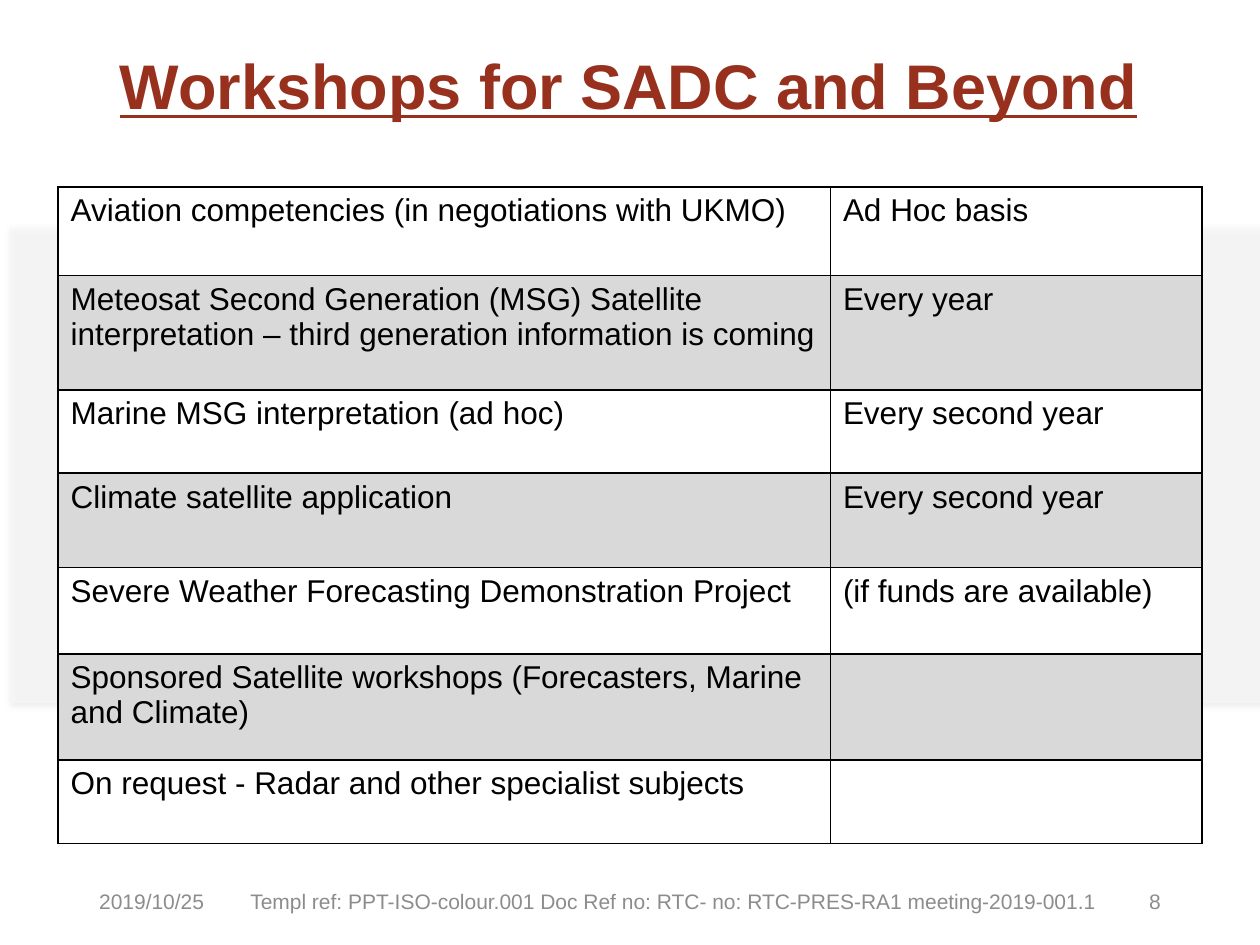
from lxml import etree
from pptx import Presentation
from pptx import util as u
from pptx.dml.color import RGBColor
from pptx.enum import shapes, text
from pptx.oxml import parse_xml
from pptx.oxml.ns import nsdecls, qn

WHITE = RGBColor(0xFF, 0xFF, 0xFF)
BLACK = RGBColor(0, 0, 0)
BAND = RGBColor(0xD9, 0xD9, 0xD9)
RUST = RGBColor(0x97, 0x30, 0x1D)
MUTED = RGBColor(0x8C, 0x8C, 0x8C)

TITLE_FORMAT = {"name": "Arial", "size": u.Pt(36), "bold": True, "underline": True}
CELL_FORMAT = {"name": "Arial", "size": u.Pt(18), "bold": False}
FOOTER_FORMAT = {"name": "Arial", "size": u.Pt(12)}

COLUMN_WIDTHS = (15.57, 7.49)
WORKSHOPS = (
    (1.78, "Aviation competencies (in negotiations with UKMO)", "Ad Hoc basis"),
    (2.31, "Meteosat Second Generation (MSG) Satellite interpretation – "
           "third generation information is coming", "Every year"),
    (1.68, "Marine MSG interpretation (ad hoc)", "Every second year"),
    (1.9, "Climate satellite application", "Every second year"),
    (1.74, "Severe Weather Forecasting Demonstration Project", "(if funds are available)"),
    (2.14, "Sponsored Satellite workshops (Forecasters, Marine and Climate)", ""),
    (1.68, "On request - Radar and other specialist subjects", ""),
)


def format_paragraph(paragraph, formats, color):
    """Apply font values and a colour to a paragraph."""
    for name, value in formats.items():
        setattr(paragraph.font, name, value)
    paragraph.font.color.rgb = color


def add_text(slide, box, words, formats, color, align, anchor):
    """Place one wrapped paragraph in a box and return the paragraph."""
    frame = slide.shapes.add_textbox(*map(u.Cm, box)).text_frame
    frame.word_wrap = True
    frame.vertical_anchor = anchor
    paragraph = frame.paragraphs[0]
    paragraph.text = words
    paragraph.alignment = align
    format_paragraph(paragraph, formats, color)
    return paragraph


def add_panel(slide, box):
    """Place the translucent panel with its soft shadow."""
    panel = slide.shapes.add_shape(shapes.MSO_SHAPE.RECTANGLE, *map(u.Cm, box))
    panel.fill.solid()
    panel.fill.fore_color.rgb = WHITE
    panel.line.fill.background()
    fill_color = panel.fill._xPr.find(qn("a:solidFill"))[0]
    etree.SubElement(fill_color, qn("a:alpha"), val="38000")
    panel.shadow.inherit = False
    effects = panel._element.spPr.find(qn("a:effectLst"))
    effects.append(parse_xml(
        f'<a:outerShdw {nsdecls("a")} blurRad="{u.Pt(3.1)}" dist="{u.Pt(1.8)}" '
        'dir="5400000" rotWithShape="0"><a:srgbClr val="808080">'
        '<a:alpha val="35000"/></a:srgbClr></a:outerShdw>'))


def add_title(slide, box):
    """Place the underlined slide title."""
    paragraph = add_text(slide, box, "Workshops for SADC and Beyond", TITLE_FORMAT, RUST,
                         text.PP_ALIGN.CENTER, text.MSO_ANCHOR.BOTTOM)
    paragraph.line_spacing = 0.9


def style_cell(cell, words, fill):
    """Fill in one table cell and draw its borders."""
    cell.text = words
    format_paragraph(cell.text_frame.paragraphs[0], CELL_FORMAT, BLACK)
    properties = cell._tc.get_or_add_tcPr()
    for side in ("lnL", "lnR", "lnT", "lnB"):
        properties.append(parse_xml(
            f'<a:{side} {nsdecls("a")} w="{u.Pt(1)}"><a:solidFill>'
            f'<a:srgbClr val="{BLACK}"/></a:solidFill></a:{side}>'))
    cell.fill.solid()
    cell.fill.fore_color.rgb = fill


def add_workshop_table(slide, box):
    """Place the workshops and their frequency in banded rows."""
    table = slide.shapes.add_table(len(WORKSHOPS), len(COLUMN_WIDTHS), *map(u.Cm, box)).table
    table.first_row = table.horz_banding = False
    for column, width in zip(table.columns, COLUMN_WIDTHS):
        column.width = u.Cm(width)
    for index, (height, *entries) in enumerate(WORKSHOPS):
        table.rows[index].height = u.Cm(height)
        for cell, words in zip(table.rows[index].cells, entries):
            style_cell(cell, words, BAND if index % 2 else WHITE)


def add_footer(slide, box):
    """Place the date, document reference and slide number in a strip."""
    left, top, width, height = box
    parts = (
        (0, 5.72, "2019/10/25", text.PP_ALIGN.LEFT),
        (2.57, 18.52, "Templ ref: PPT-ISO-colour.001 Doc Ref no: RTC- no: "
                      "RTC-PRES-RA1 meeting-2019-001.1", text.PP_ALIGN.CENTER),
        (width - 5.72, 5.72, "8", text.PP_ALIGN.RIGHT),
    )
    for offset, part_width, words, align in parts:
        add_text(slide, (left + offset, top, part_width, height), words,
                 FOOTER_FORMAT, MUTED, align, text.MSO_ANCHOR.MIDDLE)


def main():
    """Build the slide and save it."""
    presentation = Presentation()
    presentation.slide_width, presentation.slide_height = u.Cm(25.4), u.Cm(19.05)
    slide = presentation.slides.add_slide(presentation.slide_layouts[6])
    add_panel(slide, (0.23, 4.55, 25.4, 9.63))
    add_title(slide, (1.73, 0.3, 21.89, 2.31))
    add_workshop_table(slide, (1.17, 3.77, sum(COLUMN_WIDTHS), 13.23))
    add_footer(slide, (1.75, 17.65, 21.9, 1.02))
    presentation.save("out.pptx")


if __name__ == "__main__":
    main()
